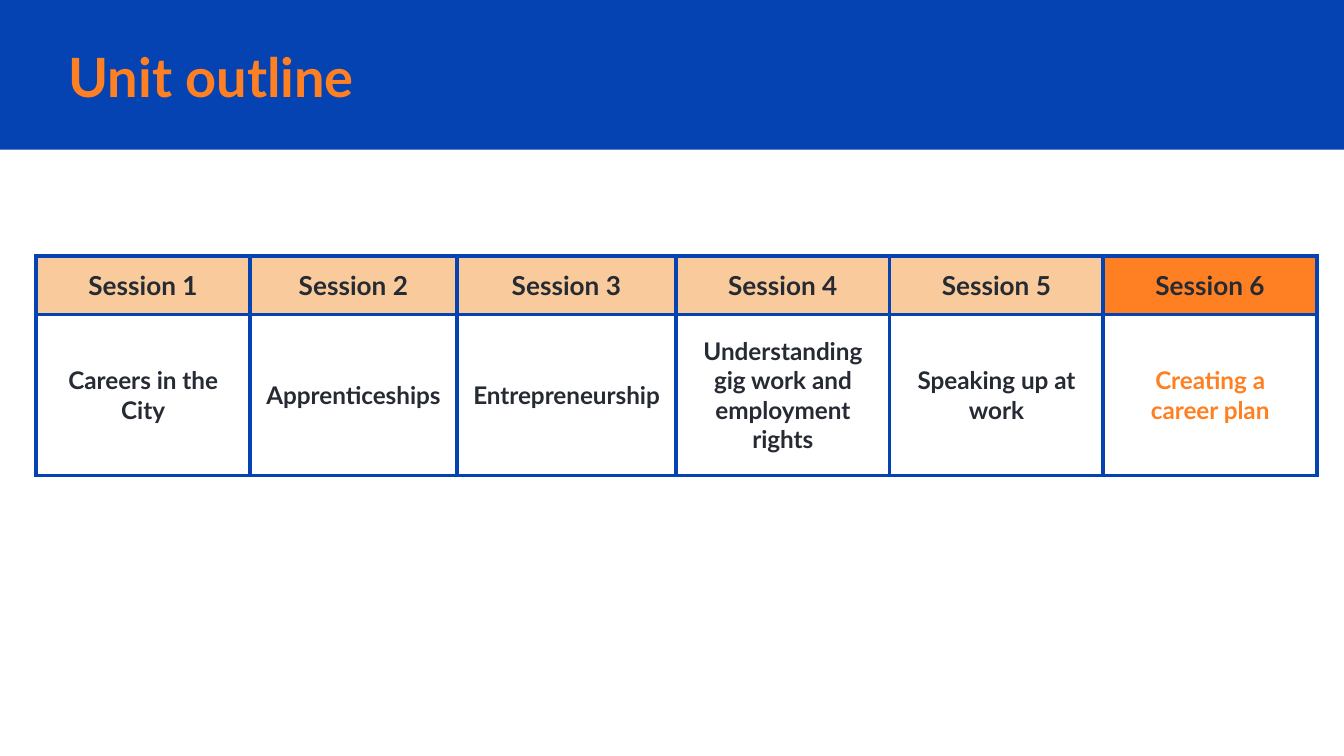
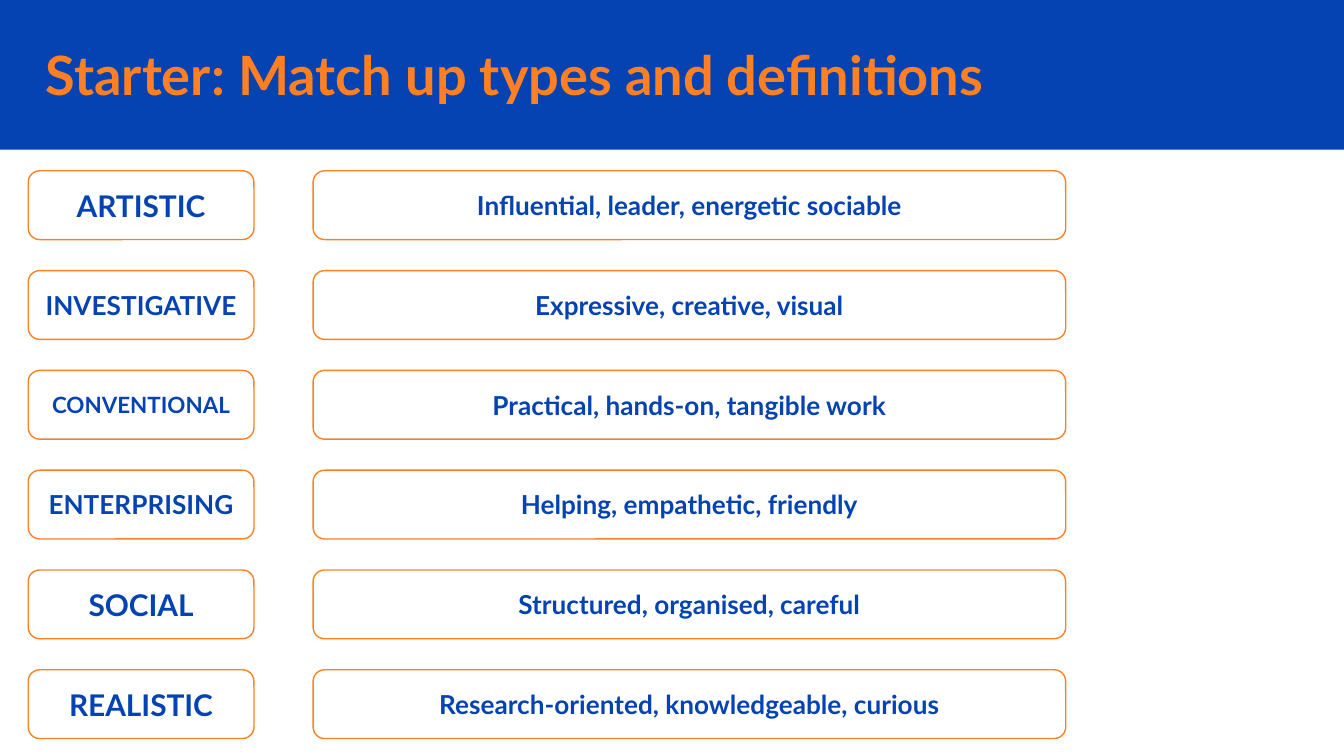
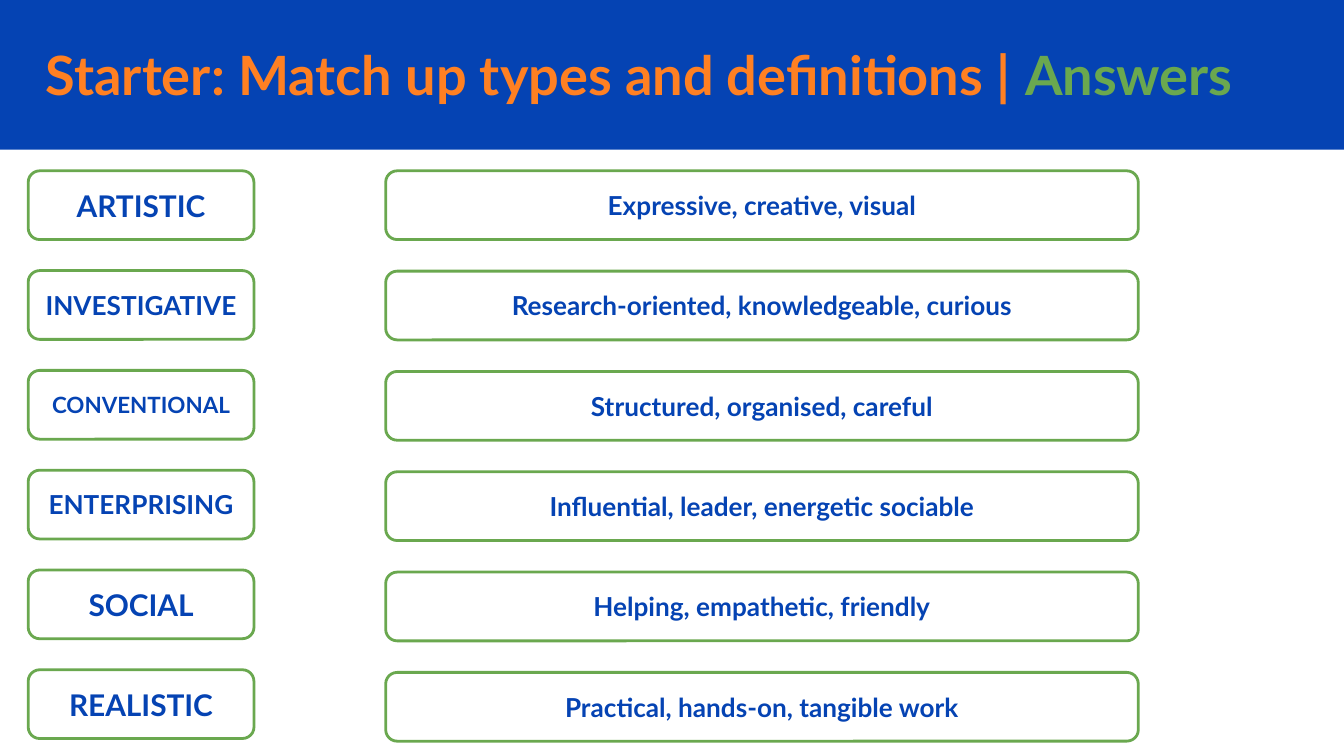
from lxml import etree
from pptx import Presentation
from pptx.dml.color import RGBColor
from pptx.enum.shapes import MSO_SHAPE
from pptx.enum.text import MSO_ANCHOR, MSO_AUTO_SIZE, PP_ALIGN
from pptx.oxml.ns import qn
from pptx.util import Inches, Pt

RECTANGLE, ROUNDED = MSO_SHAPE.RECTANGLE, MSO_SHAPE.ROUNDED_RECTANGLE
TOP, MIDDLE = MSO_ANCHOR.TOP, MSO_ANCHOR.MIDDLE
LEFT, CENTER = PP_ALIGN.LEFT, PP_ALIGN.CENTER

# Shared style
FONT = "Lato"
BLUE, ORANGE, PEACH = "0543B3", "FF8022", "F9CB9C"
GREEN, INK, WHITE = "6AA84F", "262A33", "FFFFFF"
TITLE_LAYOUT = 5

# Rows of the matching task, as percent of the slide height
FIRST_ROW, ROW_HEIGHT, ROW_STEP = 22.6, 9.1, 13.2

# Content
SESSIONS = [  # topic, column width in percent
    ("Careers in the City", 15.9),
    ("Apprenticeships", 15.4),
    ("Entrepreneurship", 16.3),
    ("Understanding gig work and employment rights", 15.9),
    ("Speaking up at work", 15.9),
    ("Creating a\ncareer plan", 15.9),
]
TYPES = [  # name, text size, definition
    ("ARTISTIC", 16, "Expressive, creative, visual"),
    ("INVESTIGATIVE", 14, "Research-oriented, knowledgeable, curious"),
    ("CONVENTIONAL", 12, "Structured, organised, careful"),
    ("ENTERPRISING", 14, "Influential, leader, energetic sociable"),
    ("SOCIAL", 16, "Helping, empathetic, friendly"),
    ("REALISTIC", 16, "Practical, hands-on, tangible work"),
]
SHUFFLED_ORDER = [3, 0, 5, 4, 2, 1]
STARTER = "Starter: Match up types and definitions"


def paint(target, colour):
    """Give a fill or a font a solid colour."""
    if hasattr(target, "solid"):
        target.solid()
        target.fore_color.rgb = RGBColor.from_string(colour)
    else:
        target.color.rgb = RGBColor.from_string(colour)


def write(frame, text, size=14, colour=BLUE, align=CENTER, tail="", tail_colour=None):
    """Fill a frame, one paragraph a line; tail is a last span in its own colour."""
    frame.word_wrap = True
    lines = text.split("\n")
    for index, line in enumerate(lines):
        para = frame.add_paragraph() if index else frame.paragraphs[0]
        para.alignment = align
        spans = [(line, colour)]
        if tail and index == len(lines) - 1:
            spans.append((tail, tail_colour))
        for words, shade in spans:
            span = para.add_run()
            span.text = words
            span.font.name, span.font.size, span.font.bold = FONT, Pt(size), True
            paint(span.font, shade)


def set_insets(target):
    for side in ("left", "top", "right", "bottom"):
        setattr(target, f"margin_{side}", Inches(0.1))


def add_borders(cell, colour, width):
    properties = cell._tc.get_or_add_tcPr()
    for side in ("lnL", "lnR", "lnT", "lnB"):
        line = etree.SubElement(properties, qn(f"a:{side}"), w=str(Pt(width)))
        fill = etree.SubElement(line, qn("a:solidFill"))
        etree.SubElement(fill, qn("a:srgbClr"), val=colour)


class Builder:
    """Holds the deck and its current page; positions are percent of the page."""

    def __init__(self):
        self.deck = Presentation()
        self.deck.slide_width, self.deck.slide_height = Inches(10), Inches(5.625)
        self.layout = self.deck.slide_layouts[TITLE_LAYOUT]
        self.page = None

    def across(self, share):
        return round(self.deck.slide_width * share / 100)

    def down(self, share):
        return round(self.deck.slide_height * share / 100)

    def area(self, x, y, width, height):
        return self.across(x), self.down(y), self.across(width), self.down(height)

    def new_page(self):
        self.page = self.deck.slides.add_slide(self.layout)

    def shape(self, kind, area, fill, line=None, line_width=0.75):
        box = self.page.shapes.add_shape(kind, *self.area(*area))
        box.shadow.inherit = False
        paint(box.fill, fill)
        if line:
            paint(box.line.fill, line)
            box.line.width = Pt(line_width)
        else:
            box.line.fill.background()
        return box

    def shared_band(self):
        """Draw the title band once and keep it in the layout, behind all else."""
        band = self.shape(RECTANGLE, (0, 0, 100, 19.8), BLUE)
        self.layout.element.cSld.spTree.insert(2, band.element)

    def title(self, text, area, **style):
        box = self.page.shapes.title
        box.left, box.top, box.width, box.height = self.area(*area)
        frame = box.text_frame
        frame.auto_size = MSO_AUTO_SIZE.NONE
        frame.vertical_anchor = MIDDLE
        set_insets(frame)
        write(frame, text, size=29, colour=ORANGE, align=LEFT, **style)

    def card(self, text, area, line, line_width, size=14):
        box = self.shape(ROUNDED, area, WHITE, line, line_width)
        box.adjustments[0] = 0.167
        box.text_frame.vertical_anchor = MIDDLE
        set_insets(box.text_frame)
        write(box.text_frame, text, size=size)

    def card_column(self, cards, x, width, line, line_width, step=ROW_STEP):
        for row, (text, size) in enumerate(cards):
            area = (x, FIRST_ROW + row * step, width, ROW_HEIGHT)
            self.card(text, area, line, line_width, size)

    def session_table(self, sessions, x, y, heights):
        width = sum(share for _, share in sessions)
        area = self.area(x, y, width, sum(heights))
        table = self.page.shapes.add_table(2, len(sessions), *area).table
        table.first_row = table.horz_banding = False
        for row, height in zip(table.rows, heights):
            row.height = self.down(height)
        for index, (topic, share) in enumerate(sessions):
            table.columns[index].width = self.across(share)
            current = index == len(sessions) - 1
            self.cell(table.cell(0, index), f"Session {index + 1}", 14, INK,
                      ORANGE if current else PEACH, TOP)
            self.cell(table.cell(1, index), topic, 13,
                      ORANGE if current else INK, WHITE, MIDDLE)

    def cell(self, cell, text, size, colour, fill, anchor):
        add_borders(cell, BLUE, 2.25)
        paint(cell.fill, fill)
        cell.vertical_anchor = anchor
        set_insets(cell)
        write(cell.text_frame, text, size=size, colour=colour)


def main():
    builder = Builder()
    names = [(name, size) for name, size, _ in TYPES]
    answers = [(definition, 14) for _, _, definition in TYPES]

    # Unit outline
    builder.new_page()
    builder.shared_band()
    builder.title("Unit outline", (4.1, 5, 84.6, 10))
    builder.session_table(SESSIONS, 2.7, 33.9, (7.7, 21.3))

    # Matching task
    builder.new_page()
    builder.title(STARTER, (2.4, 4.8, 82.3, 10))
    builder.card_column(names, 2.1, 16.8, ORANGE, 0.75)
    shuffled = [answers[index] for index in SHUFFLED_ORDER]
    builder.card_column(shuffled, 23.3, 56, ORANGE, 0.75)

    # Answers
    builder.new_page()
    builder.title(f"{STARTER} | ", (2.4, 4.8, 96.3, 10),
                  tail="Answers", tail_colour=GREEN)
    builder.card_column(names, 2.1, 16.8, GREEN, 1.5)
    builder.card_column(answers, 28.7, 56, GREEN, 1.5, step=13.27)

    builder.deck.save("out.pptx")


if __name__ == "__main__":
    main()
